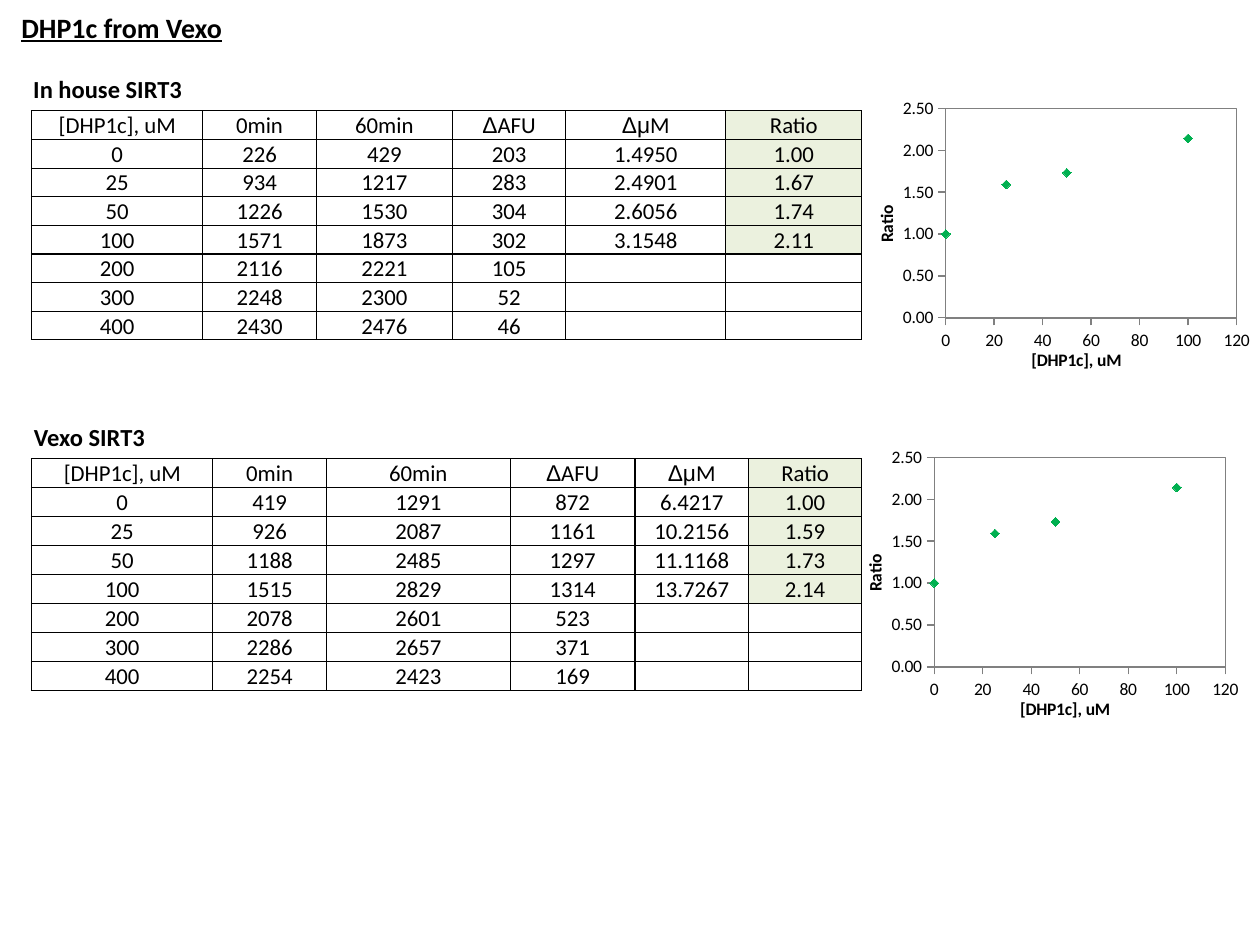
from itertools import groupby
from lxml import etree
from pptx import Presentation
from pptx import util as u
from pptx.chart import data as cd
from pptx.dml.color import RGBColor
from pptx.enum import chart as ch, text
from pptx.oxml import parse_xml
from pptx.oxml.ns import nsdecls, qn

BLACK = RGBColor(0x00, 0x00, 0x00)
GRAY = RGBColor(0x80, 0x80, 0x80)
GREEN = RGBColor(0x00, 0xB0, 0x50)
PALE = RGBColor(0xEB, 0xF1, 0xDE)
FONT = "Calibri"
HEAD = ["[DHP1c], uM", "0min", "60min", "ΔAFU", "ΔμM", "Ratio"]
DOSES = [0, 25, 50, 100, 200, 300, 400]
RATIOS = [1, 1.59, 1.73, 2.14]
HOUSE = [
    ["226", "429", "203", "1.4950", "1.00"],
    ["934", "1217", "283", "2.4901", "1.67"],
    ["1226", "1530", "304", "2.6056", "1.74"],
    ["1571", "1873", "302", "3.1548", "2.11"],
    ["2116", "2221", "105", "", ""],
    ["2248", "2300", "52", "", ""],
    ["2430", "2476", "46", "", ""],
]
BOUGHT = [
    ["419", "1291", "872", "6.4217", "1.00"],
    ["926", "2087", "1161", "10.2156", "1.59"],
    ["1188", "2485", "1297", "11.1168", "1.73"],
    ["1515", "2829", "1314", "13.7267", "2.14"],
    ["2078", "2601", "523", "", ""],
    ["2286", "2657", "371", "", ""],
    ["2254", "2423", "169", "", ""],
]


def style(font, size, bold=False, name=FONT):
    font.size = u.Pt(size)
    font.bold = bold
    font.name = name
    font.color.rgb = BLACK


def place(shape, x, y, w, h):
    shape.left, shape.top = u.Inches(x), u.Inches(y)
    shape.width, shape.height = u.Inches(w), u.Inches(h)


def write(shape, words, size, align, line=False):
    frame = shape.text_frame
    frame.word_wrap = False
    frame.auto_size = text.MSO_AUTO_SIZE.SHAPE_TO_FIT_TEXT
    frame.vertical_anchor = text.MSO_ANCHOR.TOP
    para = frame.paragraphs[0]
    para.alignment = align
    run = para.add_run()
    run.text = words
    style(run.font, size, True)
    run.font.underline = line


def label(slide, words, x, y, w, h):
    box = slide.shapes.add_textbox(*map(u.Inches, (x, y, w, h)))
    write(box, words, 14, text.PP_ALIGN.CENTER)


def border(cell):
    props = cell._tc.get_or_add_tcPr()
    for i, side in enumerate("LRTB"):
        props.insert(i, parse_xml(
            f'<a:ln{side} {nsdecls("a")} w="{u.Pt(0.75)}"><a:solidFill>'
            f'<a:srgbClr val="{BLACK}"/></a:solidFill></a:ln{side}>'))


def fill_cell(cell, words, shade):
    cell.margin_left = cell.margin_right = cell.margin_top = u.Inches(0.01)
    cell.margin_bottom = 0
    cell.vertical_anchor = text.MSO_ANCHOR.MIDDLE
    para = cell.text_frame.paragraphs[0]
    para.alignment = text.PP_ALIGN.CENTER
    for greek, chars in groupby(words, lambda c: c in "Δμ"):
        run = para.add_run()
        run.text = "".join(chars)
        style(run.font, 13, name="Arial" if greek else FONT)
    if not words:
        etree.SubElement(para._p, qn("a:endParaRPr"), sz="1300")
    if shade:
        cell.fill.solid()
        cell.fill.fore_color.rgb = PALE
    else:
        cell.fill.background()
    border(cell)


def add_grid(slide, y, high, widths, data):
    rows = [HEAD] + [[str(d)] + row for d, row in zip(DOSES, data)]
    shape = slide.shapes.add_table(
        len(rows), len(HEAD), u.Inches(0.25), u.Inches(y),
        u.Inches(sum(widths)), u.Inches(high))
    grid = shape.table
    grid.first_row = grid.horz_banding = False
    for col, wide in zip(grid.columns, widths):
        col.width = u.Inches(wide)
    for r, row in enumerate(rows):
        grid.rows[r].height = u.Inches(high / len(rows))
        for c, words in enumerate(row):
            shade = c == len(HEAD) - 1 and words != ""
            fill_cell(grid.cell(r, c), words, shade)


def set_axis(axis, title, top, step, form):
    axis.minimum_scale, axis.maximum_scale = 0, top
    axis.major_unit = step
    axis.has_major_gridlines = False
    axis.major_tick_mark = ch.XL_TICK_MARK.OUTSIDE
    axis.tick_labels.number_format = form
    axis.tick_labels.number_format_is_linked = False
    style(axis.tick_labels.font, 10)
    axis.format.line.color.rgb = GRAY
    run = axis.axis_title.text_frame.paragraphs[0].add_run()
    run.text = title
    style(run.font, 10, True)


def frame_plot(chart):
    area = chart._chartSpace.find(f'.//{qn("c:plotArea")}')
    for old in area.findall(qn("c:layout")):
        area.remove(old)
    spots = {"x": 0.19, "y": 0.07, "w": 0.75, "h": 0.73}
    sizes = "".join(f'<c:{k} val="{v}"/>' for k, v in spots.items())
    area.insert(0, parse_xml(
        f'<c:layout {nsdecls("c")}><c:manualLayout>'
        '<c:layoutTarget val="inner"/><c:xMode val="edge"/>'
        f'<c:yMode val="edge"/>{sizes}</c:manualLayout></c:layout>'))
    area.append(parse_xml(
        f'<c:spPr {nsdecls("c", "a")}><a:noFill/><a:ln w="{u.Pt(0.75)}">'
        f'<a:solidFill><a:srgbClr val="{GRAY}"/></a:solidFill></a:ln></c:spPr>'))


def add_plot(slide, x, y):
    data = cd.XyChartData()
    dots = data.add_series("Series 1")
    for dose, ratio in zip(DOSES, RATIOS):
        dots.add_data_point(dose, ratio)
    chart = slide.shapes.add_chart(
        ch.XL_CHART_TYPE.XY_SCATTER, *map(u.Inches, (x, y, 3.08, 2.28)),
        data).chart
    chart.has_legend = chart.has_title = False
    style(chart.font, 10)
    chart.plots[0].vary_by_categories = False
    set_axis(chart.category_axis, HEAD[0], 120, 20, "0")
    set_axis(chart.value_axis, HEAD[-1], 2.5, 0.5, "0.00")
    line = chart.plots[0].series[0]
    line.smooth = False
    line.format.line.fill.background()
    mark = line.marker
    mark.style, mark.size = ch.XL_MARKER_STYLE.DIAMOND, 5
    mark.format.fill.solid()
    mark.format.fill.fore_color.rgb = GREEN
    mark.format.line.color.rgb = GREEN
    frame_plot(chart)


def main():
    deck = Presentation()
    deck.slide_width, deck.slide_height = u.Inches(10), u.Inches(7.5)
    slide = deck.slides.add_slide(deck.slide_layouts[5])
    title = slide.shapes.title
    place(title, 0.07, 0.03, 1.8, 0.37)
    write(title, "DHP1c from Vexo", 16, text.PP_ALIGN.LEFT, True)
    label(slide, "In house SIRT3", 0.16, 0.54, 1.39, 0.34)
    add_grid(slide, 0.88, 1.8, [1.36, 0.9, 1.08, 0.9, 1.27, 1.08], HOUSE)
    add_plot(slide, 6.92, 0.7)
    label(slide, "Vexo SIRT3", 0.17, 3.3, 1.08, 0.34)
    add_grid(slide, 3.64, 1.84, [1.44, 0.9, 1.46, 0.99, 0.9, 0.9], BOUGHT)
    add_plot(slide, 6.83, 3.47)
    deck.save("out.pptx")


if __name__ == "__main__":
    main()
